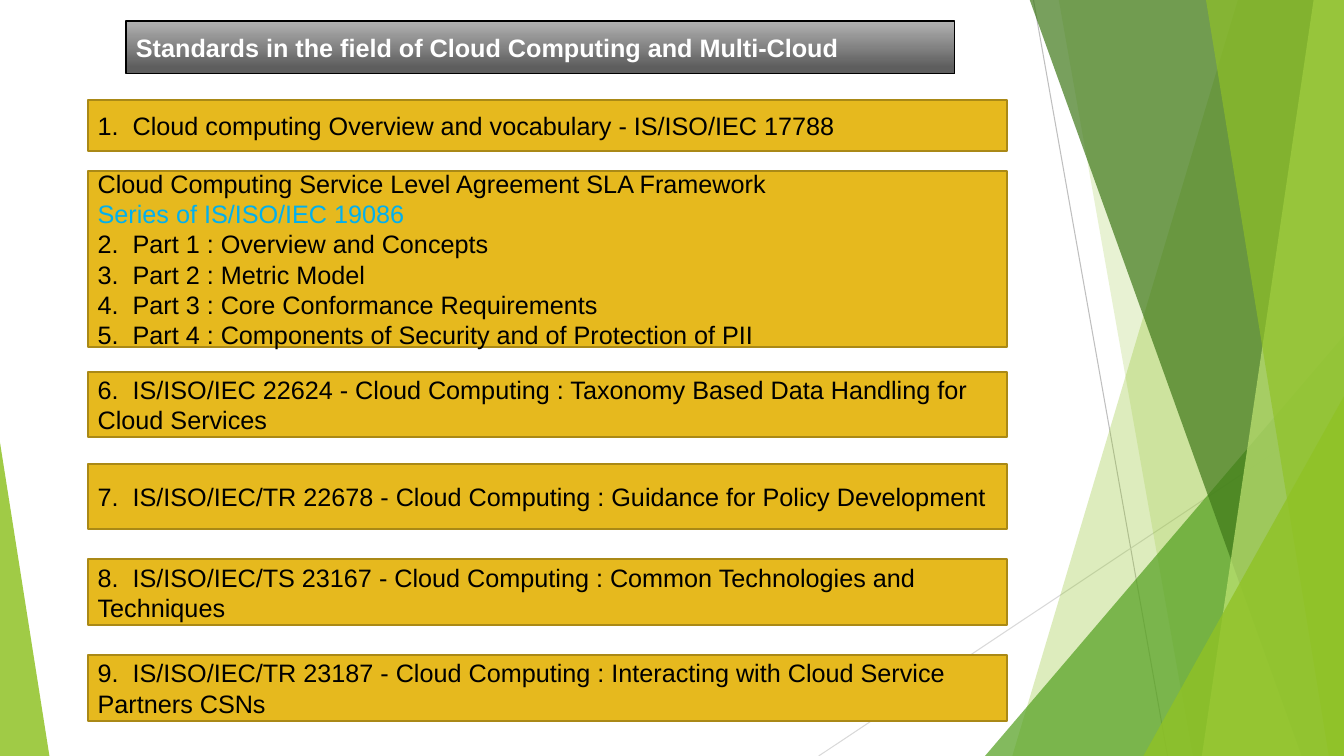
from dataclasses import dataclass

from lxml.etree import SubElement
from pptx import Presentation
from pptx.dml.color import RGBColor
from pptx.enum.shapes import MSO_CONNECTOR, MSO_SHAPE
from pptx.enum.text import MSO_ANCHOR, PP_ALIGN
from pptx.oxml.ns import qn
from pptx.util import Pt

PX = 9144
WIDTH, HEIGHT = 1333, 750


@dataclass(frozen=True)
class Theme:
    font: str = "Arial"
    size: int = 18
    text: str = "000000"
    accent: str = "00B0F0"
    title: str = "FFFFFF"
    title_top: str = "B2B2B2"
    title_bottom: str = "5E5E5E"
    title_line: str = "000000"
    box: str = "E6B91E"
    box_line: str = "AA8916"
    lime: str = "90C226"
    pale: str = "C0E474"
    green: str = "54A021"
    dark: str = "3F7819"
    grey: str = "BFBFBF"
    light_grey: str = "D9D9D9"


class Slide:
    """Draws styled elements on one slide, with lengths in px."""

    def __init__(self, s, theme):
        self.s = s
        self.theme = theme

    def line(self, x1, y1, x2, y2, color):
        ends = [v * PX for v in (x1, y1, x2, y2)]
        c = self.s.shapes.add_connector(MSO_CONNECTOR.STRAIGHT, *ends)
        c.line.color.rgb = RGBColor.from_string(color)
        c.line.width = Pt(0.75)
        SubElement(c._element.spPr, qn("a:effectLst"))

    def tint(self, sp, color, alpha):
        sp.shadow.inherit = False
        sp.line.fill.background()
        sp.fill.solid()
        sp.fill.fore_color.rgb = RGBColor.from_string(color)
        clr = sp._element.spPr.find(".//" + qn("a:srgbClr"))
        SubElement(clr, qn("a:alpha")).set("val", str(alpha * 1000))

    def band(self, top_x, bottom_x, color, alpha):
        fb = self.s.shapes.build_freeform(top_x, -1, scale=PX)
        fb.add_line_segments([(WIDTH, -1), (WIDTH, HEIGHT), (bottom_x, HEIGHT)])
        self.tint(fb.convert_to_shape(), color, alpha)

    def triangle(self, x, y, w, apex, color, alpha):
        box = [v * PX for v in (x, y, w, HEIGHT - y)]
        sp = self.s.shapes.add_shape(MSO_SHAPE.ISOSCELES_TRIANGLE, *box)
        sp.adjustments[0] = apex
        self.tint(sp, color, alpha)

    def box(self, x, y, w, h, line, width, paragraphs, bold=False):
        sp = self.s.shapes.add_shape(MSO_SHAPE.RECTANGLE, *[v * PX for v in (x, y, w, h)])
        sp.shadow.inherit = False
        sp.line.color.rgb = RGBColor.from_string(line)
        sp.line.width = Pt(width)
        tf = sp.text_frame
        tf.word_wrap = True
        tf.vertical_anchor = MSO_ANCHOR.MIDDLE
        tf.text = "\n".join(text for text, _ in paragraphs)
        for p, (_, color) in zip(tf.paragraphs, paragraphs):
            p.alignment = PP_ALIGN.LEFT
            p.font.name = self.theme.font
            p.font.size = Pt(self.theme.size)
            p.font.bold = bold
            p.font.color.rgb = RGBColor.from_string(color)
        return sp

    def standard(self, y, h, paragraphs):
        sp = self.box(87, y, 912, h, self.theme.box_line, 1.5, paragraphs)
        sp.fill.solid()
        sp.fill.fore_color.rgb = RGBColor.from_string(self.theme.box)

    def title(self, text):
        t = self.theme
        sp = self.box(125, 21, 822, 52, t.title_line, 1, [(text, t.title)], bold=True)
        sp.fill.gradient()
        sp.fill.gradient_angle = 270
        stops = [(0, t.title_top), (0.88, t.title_bottom)]
        for stop, (position, color) in zip(sp.fill.gradient_stops, stops):
            stop.position = position
            stop.color.rgb = RGBColor.from_string(color)


def main():
    prs = Presentation()
    prs.slide_width, prs.slide_height = WIDTH * PX, HEIGHT * PX
    t = Theme()
    slide = Slide(prs.slides.add_slide(prs.slide_layouts[6]), t)

    slide.line(1025, 0, 1158, HEIGHT, t.grey)
    slide.line(WIDTH, 403, 812, HEIGHT, t.light_grey)
    slide.band(1228, 1004, t.lime, 30)
    slide.band(1050, 1183, t.lime, 20)
    slide.triangle(977, 333, 356, 1, t.green, 72)
    slide.band(1021, 1291, t.dark, 70)
    slide.band(1303, 1192, t.pale, 70)
    slide.band(1196, 1318, t.lime, 65)
    slide.triangle(1134, 393, 199, 1, t.lime, 80)
    slide.triangle(0, 439, 49, 0, t.lime, 85)

    slide.standard(99, 51, [("1.  Cloud computing Overview and vocabulary - IS/ISO/IEC 17788", t.text)])
    slide.standard(170, 174, [
        ("Cloud Computing Service Level Agreement SLA Framework", t.text),
        ("Series of IS/ISO/IEC 19086", t.accent),
        ("2.  Part 1 : Overview and Concepts", t.text),
        ("3.  Part 2 : Metric Model", t.text),
        ("4.  Part 3 : Core Conformance Requirements", t.text),
        ("5.  Part 4 : Components of Security and of Protection of PII", t.text),
    ])
    for y, text in [
        (369, "6.  IS/ISO/IEC 22624 - Cloud Computing : Taxonomy Based Data Handling for Cloud Services"),
        (460, "7.  IS/ISO/IEC/TR 22678 - Cloud Computing : Guidance for Policy Development"),
        (555, "8.  IS/ISO/IEC/TS 23167 - Cloud Computing : Common Technologies and Techniques"),
        (650, "9.  IS/ISO/IEC/TR 23187 - Cloud Computing : Interacting with Cloud Service Partners CSNs"),
    ]:
        slide.standard(y, 65, [(text, t.text)])
    slide.title("Standards in the field of Cloud Computing and Multi-Cloud")

    prs.save("out.pptx")


if __name__ == "__main__":
    main()
